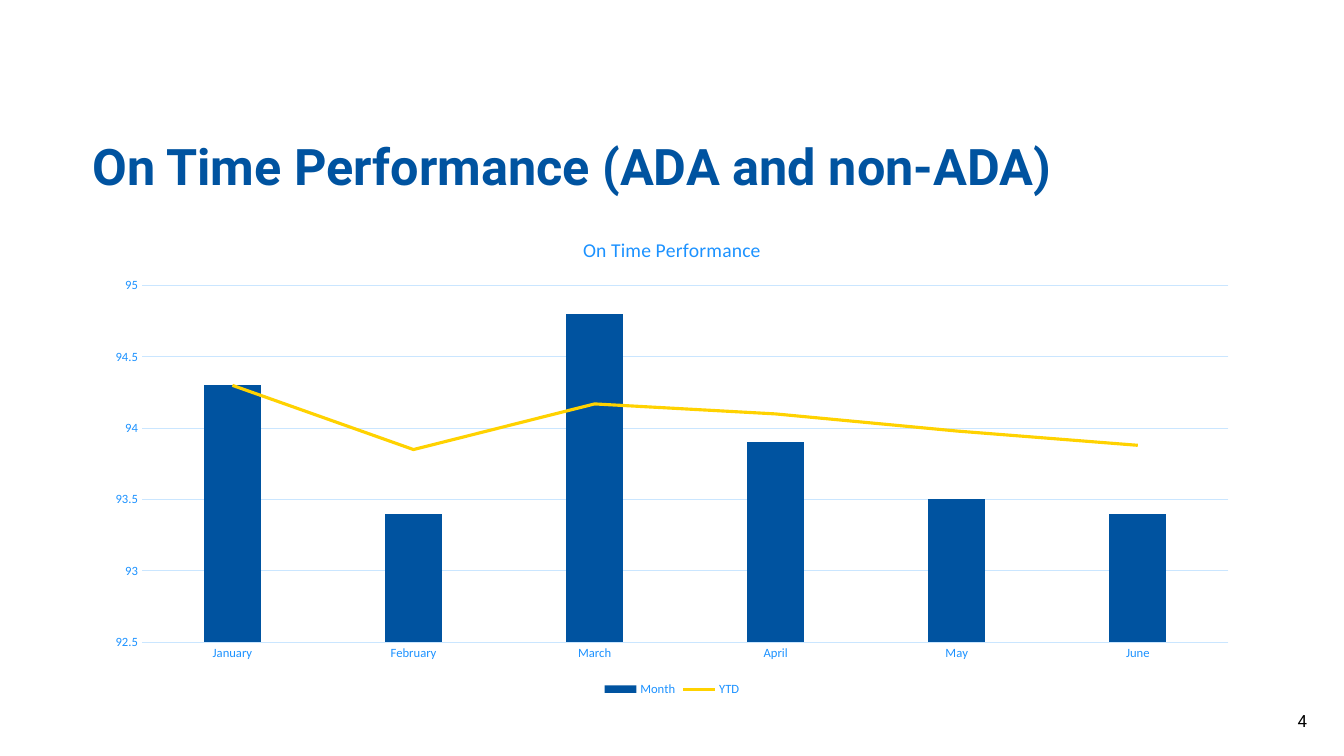
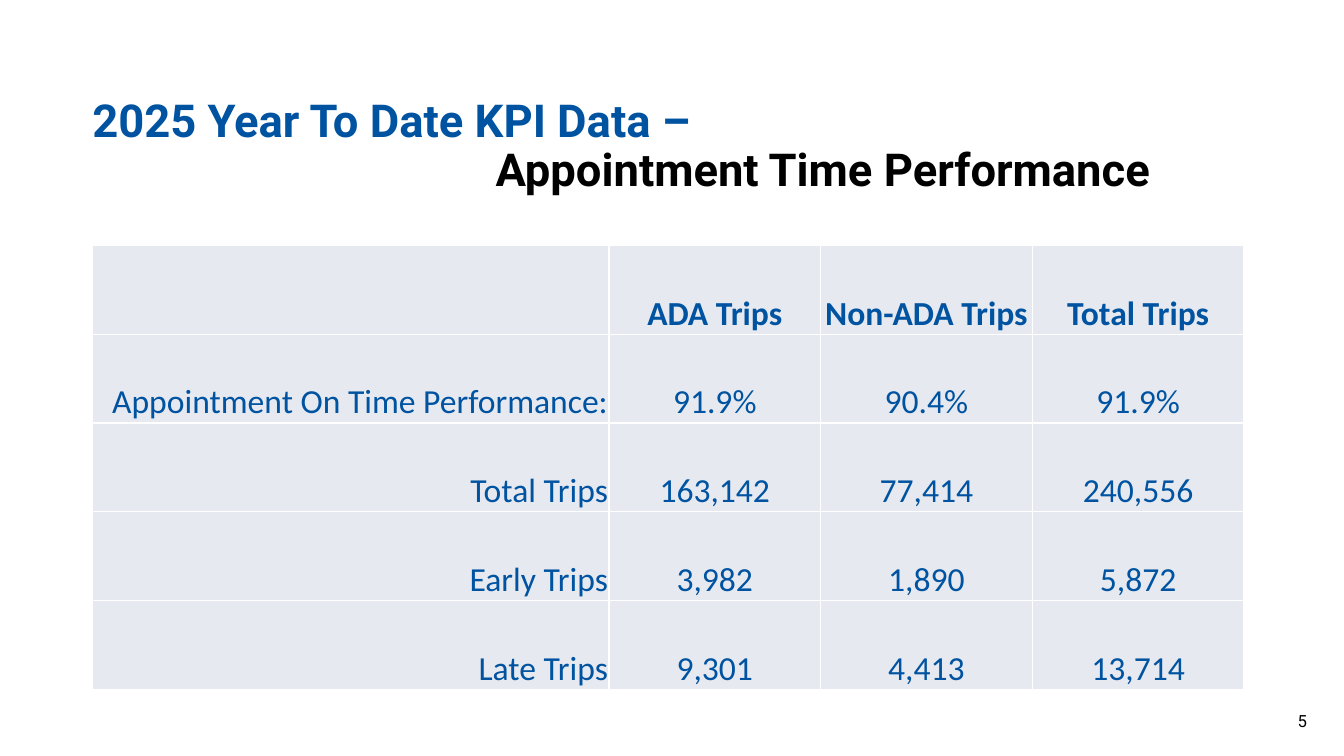
from dataclasses import dataclass

from lxml.etree import SubElement
from pptx import Presentation
from pptx.chart.data import CategoryChartData
from pptx.dml.color import RGBColor
from pptx.enum.chart import XL_CHART_TYPE, XL_LEGEND_POSITION, XL_MARKER_STYLE, XL_TICK_MARK
from pptx.enum.text import MSO_ANCHOR, PP_ALIGN
from pptx.oxml import parse_xml
from pptx.oxml.ns import nsdecls, qn
from pptx.util import Inches, Pt

# The slide is a grid of 160 columns by 90 rows; all lengths count its units.
COLUMNS, ROWS = 160, 90
UNIT = Inches(7.5) / ROWS
LEFT, WIDTH = 11, 138


@dataclass(frozen=True)
class Theme:
    blue: str = "0053A0"
    sky: str = "1C92FF"
    pale: str = "CAE6FF"
    yellow: str = "FFD200"
    cell: str = "E7E9F0"
    black: str = "000000"
    white: str = "FFFFFF"
    heading: str = "Roboto"
    body: str = "Calibri"
    title: float = 36
    long_title: float = 32.4
    table: float = 24
    chart_title: float = 14
    page_number: float = 12
    label: float = 9


THEME = Theme()

MONTHS = ["January", "February", "March", "April", "May", "June"]
PERFORMANCE = {
    "Month": [94.3, 93.4, 94.8, 93.9, 93.5, 93.4],
    "YTD": [94.3, 93.85, 94.17, 94.1, 93.98, 93.88],
}
TRIPS = [
    ["", "ADA Trips", "Non-ADA Trips", "Total Trips"],
    ["Appointment On Time Performance:", "91.9%", "90.4%", "91.9%"],
    ["Total Trips", "163,142", "77,414", "240,556"],
    ["Early Trips", "3,982", "1,890", "5,872"],
    ["Late Trips", "9,301", "4,413", "13,714"],
]


def span(units):
    return round(units * UNIT)


def apply(target, **values):
    for name, value in values.items():
        setattr(target, name, value)


def style_font(font, size, color, name=THEME.body, bold=False):
    apply(font, size=Pt(size), name=name, bold=bold)
    font.color.rgb = RGBColor.from_string(color)


def style_line(line, color, width):
    line.color.rgb = RGBColor.from_string(color)
    line.width = Pt(width)


def style_fill(fill, color):
    fill.solid()
    fill.fore_color.rgb = RGBColor.from_string(color)


def add_text_frame(slide, box, **layout):
    frame = slide.shapes.add_textbox(*map(span, box)).text_frame
    apply(frame, word_wrap=True, **layout)
    return frame


def add_title(slide, lines, size):
    """Each line is its text, colour and left indent in grid units."""
    frame = add_text_frame(
        slide, (LEFT, 8, WIDTH, 16), vertical_anchor=MSO_ANCHOR.BOTTOM,
        margin_left=0, margin_right=0, margin_top=Inches(0.4), margin_bottom=Inches(0.05))
    for index, (text, color, indent) in enumerate(lines):
        paragraph = frame.add_paragraph() if index else frame.paragraphs[0]
        apply(paragraph, text=text, line_spacing=0.9)
        if indent:
            paragraph._p.get_or_add_pPr().set("marL", str(span(indent)))
        style_font(paragraph.runs[0].font, size, color, THEME.heading, True)


def add_page_number(slide, number):
    frame = add_text_frame(
        slide, (136.4, 83.4, 19.2, 4.8), vertical_anchor=MSO_ANCHOR.MIDDLE, margin_right=0)
    paragraph = frame.paragraphs[0]
    apply(paragraph, text=str(number), alignment=PP_ALIGN.RIGHT)
    style_font(paragraph.runs[0].font, THEME.page_number, THEME.black, THEME.heading)


def move_last_series_to_line(chart):
    bars = chart.plots[0]._element
    series = bars.findall(qn("c:ser"))[-1]
    lines = parse_xml(
        f'<c:lineChart {nsdecls("c")}><c:grouping val="standard"/>'
        '<c:varyColors val="0"/><c:marker val="1"/></c:lineChart>')
    for invert in series.findall(qn("c:invertIfNegative")):
        series.remove(invert)
    lines.insert(2, series)
    for axis in bars.findall(qn("c:axId")):
        SubElement(lines, qn("c:axId")).set("val", axis.get("val"))
    bars.addnext(lines)


def style_axes(chart):
    for axis in (chart.category_axis, chart.value_axis):
        apply(axis, major_tick_mark=XL_TICK_MARK.NONE, minor_tick_mark=XL_TICK_MARK.NONE)
        style_font(axis.tick_labels.font, THEME.label, THEME.sky)
    style_line(chart.category_axis.format.line, THEME.pale, 0.75)
    scale = chart.value_axis
    apply(scale, minimum_scale=92.5, maximum_scale=95, major_unit=0.5)
    scale.format.line.fill.background()
    style_line(scale.major_gridlines.format.line, THEME.pale, 0.75)


def add_performance_chart(slide, title, box):
    data = CategoryChartData()
    data.categories = MONTHS
    for name, values in PERFORMANCE.items():
        data.add_series(name, values)
    chart = slide.shapes.add_chart(
        XL_CHART_TYPE.COLUMN_CLUSTERED, *map(span, box), data).chart
    style_font(chart.font, 10, THEME.blue)
    move_last_series_to_line(chart)

    bars, trend = chart.plots
    apply(bars, gap_width=219, overlap=-27, vary_by_categories=False)
    style_fill(bars.series[0].format.fill, THEME.blue)
    year_to_date = trend.series[0]
    year_to_date.smooth = False
    year_to_date.marker.style = XL_MARKER_STYLE.NONE
    style_line(year_to_date.format.line, THEME.yellow, 2.25)
    style_axes(chart)

    chart.has_title = True
    heading = chart.chart_title.text_frame
    heading.text = title
    style_font(heading.paragraphs[0].runs[0].font, THEME.chart_title, THEME.sky)
    chart.has_legend = True
    apply(chart.legend, position=XL_LEGEND_POSITION.BOTTOM, include_in_layout=False)
    style_font(chart.legend.font, THEME.label, THEME.sky)


def add_borders(cell, color):
    properties = cell._tc.get_or_add_tcPr()
    for index, side in enumerate(("lnL", "lnR", "lnT", "lnB")):
        properties.insert(index, parse_xml(
            f'<a:{side} {nsdecls("a")} w="{Pt(1)}"><a:solidFill>'
            f'<a:srgbClr val="{color}"/></a:solidFill></a:{side}>'))


def fill_cell(cell, text, alignment, bold):
    apply(cell, vertical_anchor=MSO_ANCHOR.BOTTOM, margin_left=Inches(0.01),
          margin_right=Inches(0.01), margin_top=Inches(0.01), margin_bottom=0)
    style_fill(cell.fill, THEME.cell)
    add_borders(cell, THEME.white)
    paragraph = cell.text_frame.paragraphs[0]
    apply(paragraph, text=text, alignment=alignment)
    style_font(paragraph.font, THEME.table, THEME.blue, bold=bold)
    for run in paragraph.runs:
        style_font(run.font, THEME.table, THEME.blue, bold=bold)


def add_trip_table(slide, rows, top, widths, row_height):
    table = slide.shapes.add_table(
        len(rows), len(widths), span(LEFT), span(top),
        span(sum(widths)), span(row_height * len(rows))).table
    apply(table, first_row=False, horz_banding=False)
    for column, width in zip(table.columns, widths):
        column.width = span(width)
    for r, values in enumerate(rows):
        table.rows[r].height = span(row_height)
        for c, text in enumerate(values):
            alignment = PP_ALIGN.CENTER if c else PP_ALIGN.RIGHT
            fill_cell(table.cell(r, c), text, alignment, bold=r == 0)


def add_slide(deck, number, title_lines, title_size):
    slide = deck.slides.add_slide(deck.slide_layouts[6])
    style_fill(slide.background.fill, THEME.white)
    add_title(slide, title_lines, title_size)
    add_page_number(slide, number)
    return slide


def main():
    deck = Presentation()
    apply(deck, slide_width=span(COLUMNS), slide_height=span(ROWS))

    on_time = add_slide(
        deck, 4, [("On Time Performance (ADA and non-ADA)", THEME.blue, 0)], THEME.title)
    add_performance_chart(on_time, "On Time Performance", (LEFT, 25.9, WIDTH, 57.5))

    appointments = add_slide(
        deck, 5,
        [("2025 Year To Date KPI Data –", THEME.blue, 0),
         ("Appointment Time Performance", THEME.black, 48)],
        THEME.long_title)
    add_trip_table(appointments, TRIPS, 29.2, [61.5] + [25.2] * 3, 10.58)

    deck.save("out.pptx")


if __name__ == "__main__":
    main()
